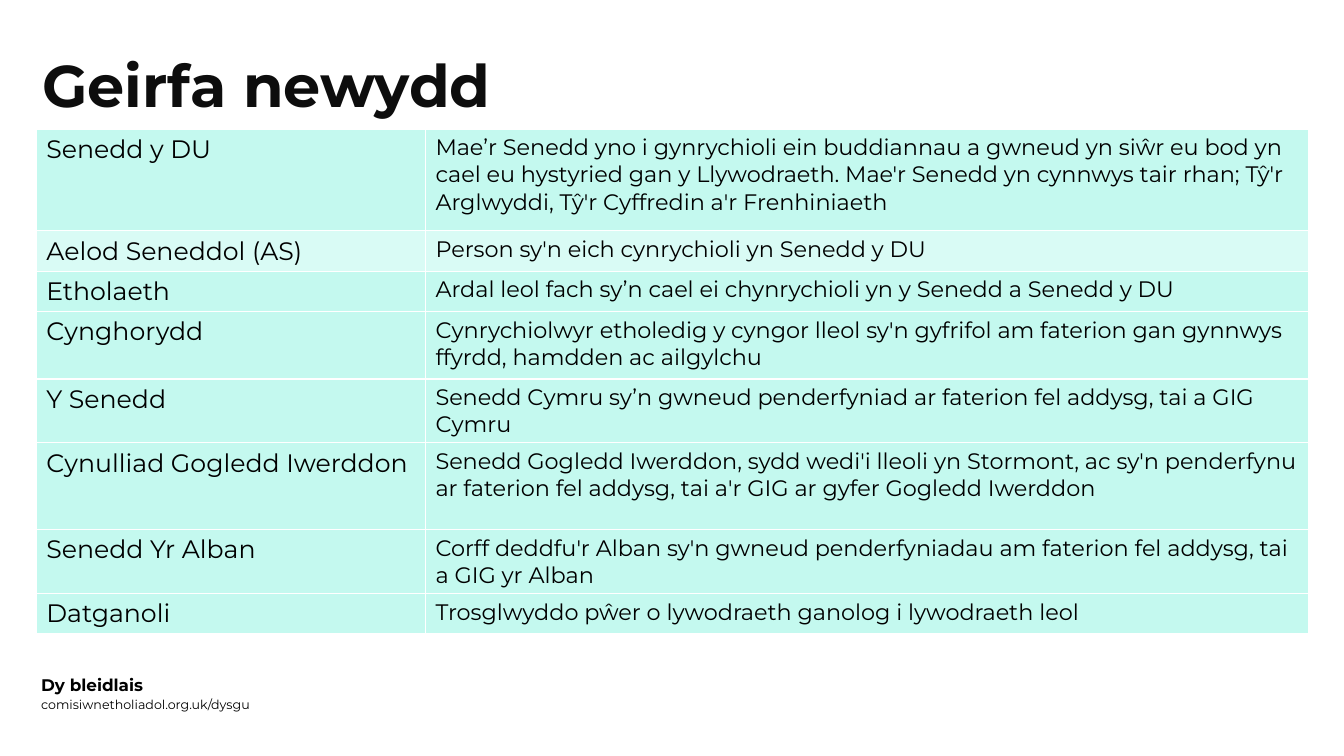
from dataclasses import dataclass
from lxml.etree import SubElement
from pptx import Presentation
from pptx.dml.color import RGBColor
from pptx.enum.text import MSO_ANCHOR, PP_ALIGN
from pptx.oxml import parse_xml
from pptx.oxml.ns import nsdecls, qn
from pptx.util import Inches, Pt

TITLE = "Geirfa newydd"
TERMS = [
    ("Senedd y DU", "Mae’r Senedd yno i gynrychioli ein buddiannau a gwneud yn siŵr eu bod yn cael eu hystyried gan y Llywodraeth. Mae'r Senedd yn cynnwys tair rhan; Tŷ'r Arglwyddi, Tŷ'r Cyffredin a'r Frenhiniaeth", 1.01),
    ("Aelod Seneddol (AS)", "Person sy'n eich cynrychioli yn Senedd y DU", 0.38),
    ("Etholaeth", "Ardal leol fach sy’n cael ei chynrychioli yn y Senedd a Senedd y DU", 0.38),
    ("Cynghorydd", "Cynrychiolwyr etholedig y cyngor lleol sy'n gyfrifol am faterion gan gynnwys ffyrdd, hamdden ac ailgylchu", 0.67),
    ("Y Senedd", "Senedd Cymru sy’n gwneud penderfyniad ar faterion fel addysg, tai a GIG Cymru", 0.61),
    ("Cynulliad Gogledd Iwerddon", "Senedd Gogledd Iwerddon, sydd wedi'i lleoli yn Stormont, ac sy'n penderfynu ar faterion fel addysg, tai a'r GIG ar gyfer Gogledd Iwerddon", 0.86),
    ("Senedd Yr Alban", "Corff deddfu'r Alban sy'n gwneud penderfyniadau am faterion fel addysg, tai a GIG yr Alban", 0.61),
    ("Datganoli", "Trosglwyddo pŵer o lywodraeth ganolog i lywodraeth leol", 0.38),
]
PALE = "Aelod Seneddol (AS)"
COLS = (3.86, 8.76)


@dataclass(frozen=True)
class Theme:
    font: str = "Montserrat"
    ink: str = "000000"
    head: str = "0D0D0D"
    mint: str = "00E7BD"
    rule: str = "FFFFFF"
    full: int = 23
    pale: int = 15
    title: int = 42
    term: int = 18
    note: int = 16
    foot: int = 12
    link: int = 9


LOOK = Theme()
FOOT = [
    ("comisiwnetholiadol.org.uk/dysgu", 6.79, LOOK.link, False),
    ("Dy bleidlais", 6.59, LOOK.foot, True),
]


def write(frame, text, size, color=LOOK.ink, bold=False):
    frame.text = text
    font = frame.paragraphs[0].runs[0].font
    font.name, font.size, font.bold = LOOK.font, Pt(size), bold
    font.color.rgb = RGBColor.from_string(color)


def place(shape, left, top, width, height):
    shape.left, shape.top = Inches(left), Inches(top)
    shape.width, shape.height = Inches(width), Inches(height)


def paint(cell, alpha):
    cell.fill.solid()
    cell.fill.fore_color.rgb = RGBColor.from_string(LOOK.mint)
    props = cell._tc.get_or_add_tcPr()
    tone = props.find(".//" + qn("a:srgbClr"))
    SubElement(tone, qn("a:alpha"), val=str(alpha * 1000))
    for spot, side in enumerate("LRTB"):
        props.insert(spot, parse_xml(
            f'<a:ln{side} {nsdecls("a")} w="{Pt(1)}"><a:solidFill>'
            f'<a:srgbClr val="{LOOK.rule}"/></a:solidFill></a:ln{side}>'))


def main():
    deck = Presentation()
    deck.slide_width, deck.slide_height = Inches(13.33), Inches(7.5)
    slide = deck.slides.add_slide(deck.slide_layouts[5])

    title = slide.shapes.title
    place(title, 0.32, 0.51, 9.95, 0.75)
    write(title.text_frame, TITLE, LOOK.title, LOOK.head, True)
    title.text_frame.vertical_anchor = MSO_ANCHOR.TOP
    line = title.text_frame.paragraphs[0]
    line.alignment, line.line_spacing = PP_ALIGN.LEFT, 0.9

    for text, top, size, bold in FOOT:
        box = slide.shapes.add_textbox(
            Inches(0.31), Inches(top), Inches(7.65), Inches(0.4))
        box.text_frame.word_wrap = True
        box.text_frame.vertical_anchor = MSO_ANCHOR.MIDDLE
        write(box.text_frame, text, size, bold=bold)

    high = sum(row[2] for row in TERMS)
    grid = slide.shapes.add_table(
        len(TERMS), len(COLS), Inches(0.36), Inches(1.28),
        Inches(sum(COLS)), Inches(high)).table
    grid.first_row = grid.horz_banding = False
    for col, width in zip(grid.columns, COLS):
        col.width = Inches(width)
    for row, (term, note, tall) in zip(grid.rows, TERMS):
        row.height = Inches(tall)
        alpha = LOOK.pale if term == PALE else LOOK.full
        pairs = ((term, LOOK.term), (note, LOOK.note))
        for cell, (text, size) in zip(row.cells, pairs):
            write(cell.text_frame, text, size)
            paint(cell, alpha)

    deck.save("out.pptx")


if __name__ == "__main__":
    main()
